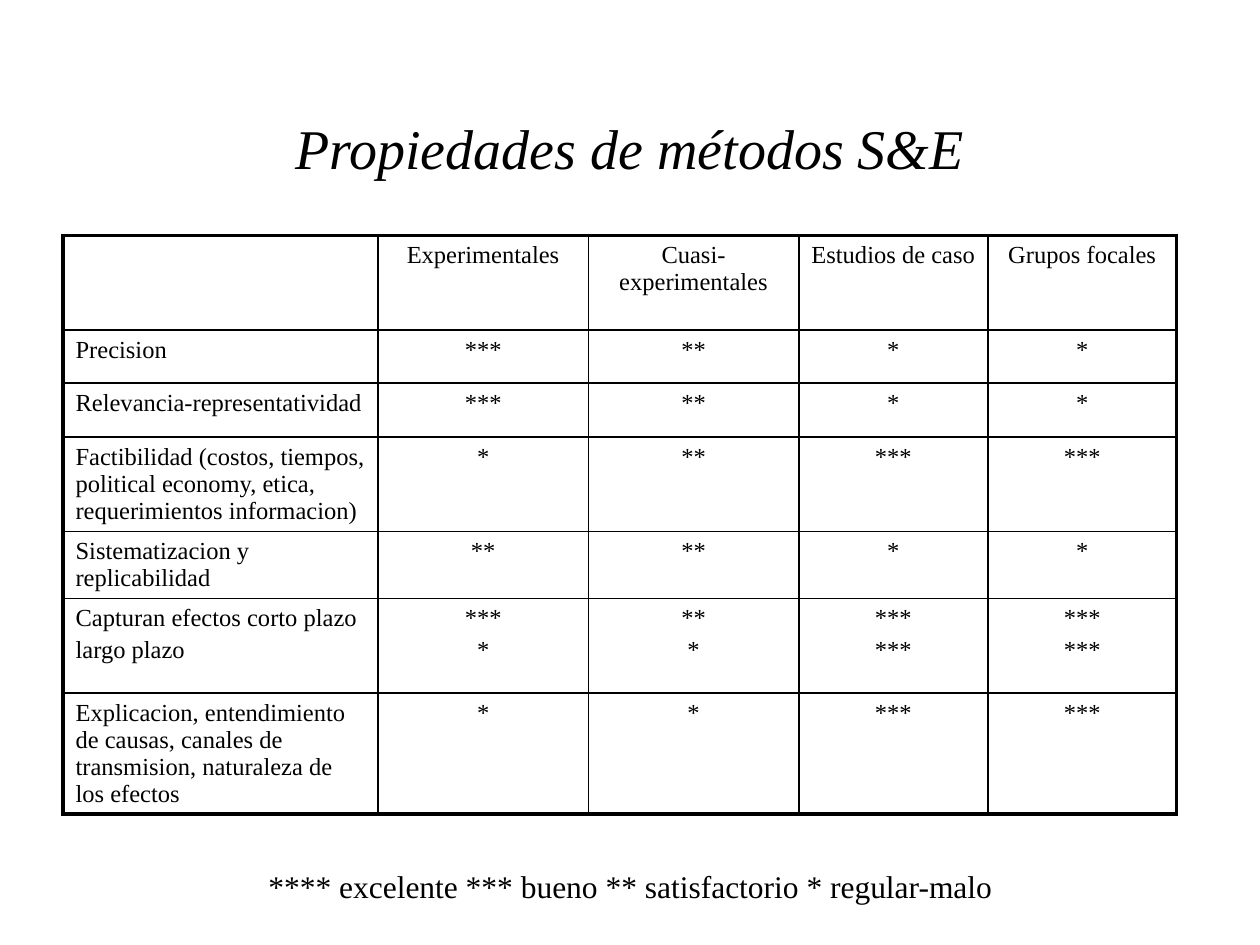
from lxml import etree
from pptx import Presentation
from pptx.dml.color import RGBColor
from pptx.enum.text import MSO_ANCHOR, PP_ALIGN
from pptx.oxml.ns import qn
from pptx.util import Inches, Pt

LEFT, CENTER = PP_ALIGN.LEFT, PP_ALIGN.CENTER
MIDDLE = MSO_ANCHOR.MIDDLE
BLACK = "000000"
THIN, THICK = Pt(1), Pt(2.25)


def style(para, size, align, before=0, italic=False):
    para.alignment = align
    para.space_before = Pt(before)
    look = {"name": "Times New Roman", "size": Pt(size), "italic": italic, "bold": False}
    for key, val in look.items():
        setattr(para.font, key, val)
    para.font.color.rgb = RGBColor.from_string(BLACK)


def edge(cell, side, width, place):
    line = etree.Element(qn("a:ln" + side), w=str(width))
    fill = etree.SubElement(line, qn("a:solidFill"))
    etree.SubElement(fill, qn("a:srgbClr"), val=BLACK)
    cell._tc.get_or_add_tcPr().insert(place, line)


prs = Presentation()
prs.slide_width, prs.slide_height = Inches(10), Inches(7.5)
slide = prs.slides.add_slide(prs.slide_layouts[5])

# Title
title = slide.shapes.title
spot = {"left": 0.75, "top": 0.67, "width": 8.5, "height": 1}
for key, val in spot.items():
    setattr(title, key, Inches(val))
title.text_frame.text = "Propiedades de métodos S&E"
title.text_frame.vertical_anchor = MIDDLE
style(title.text_frame.paragraphs[0], 32, CENTER, italic=True)

# Table of methods
rows = [
    ["", "Experimentales", "Cuasi-experimentales", "Estudios de caso", "Grupos focales"],
    ["Precision", "***", "**", "*", "*"],
    ["Relevancia-representatividad", "***", "**", "*", "*"],
    ["Factibilidad (costos, tiempos, political economy, etica, requerimientos informacion)",
     "*", "**", "***", "***"],
    ["Sistematizacion y replicabilidad", "**", "**", "*", "*"],
    ["Capturan efectos corto plazo\nlargo plazo", "***\n*", "**\n*", "***\n***", "***\n***"],
    ["Explicacion, entendimiento de causas, canales de transmision, naturaleza de los efectos",
     "*", "*", "***", "***"],
]
wide = [2.5, 1.67, 1.67, 1.5, 1.5]
high = [0.75, 0.42, 0.43, 0.75, 0.53, 0.75, 0.75]
table = slide.shapes.add_table(
    len(high), len(wide), Inches(0.5), Inches(1.87),
    Inches(sum(wide)), Inches(sum(high))).table
table.first_row = table.horz_banding = False
for col, width in zip(table.columns, wide):
    col.width = Inches(width)
for row, height in zip(table.rows, high):
    row.height = Inches(height)

for r, texts in enumerate(rows):
    for c, text in enumerate(texts):
        cell = table.cell(r, c)
        cell.text = text
        cell.fill.background()
        for para in cell.text_frame.paragraphs:
            style(para, 14, CENTER if c else LEFT, before=2.8)
        # Thick frame outside, thin rules inside
        outer = {"L": c == 0, "R": c == len(wide) - 1,
                 "T": r == 0, "B": r == len(high) - 1}
        for place, (side, rim) in enumerate(outer.items()):
            edge(cell, side, THICK if rim else THIN, place)

# Key to the marks
key_box = slide.shapes.add_textbox(Inches(0.92), Inches(6.83), Inches(8.17), Inches(0.4))
frame = key_box.text_frame
frame.word_wrap = True
frame.text = "**** excelente *** bueno ** satisfactorio * regular-malo"
style(frame.paragraphs[0], 18, CENTER, before=9)

prs.save("out.pptx")
